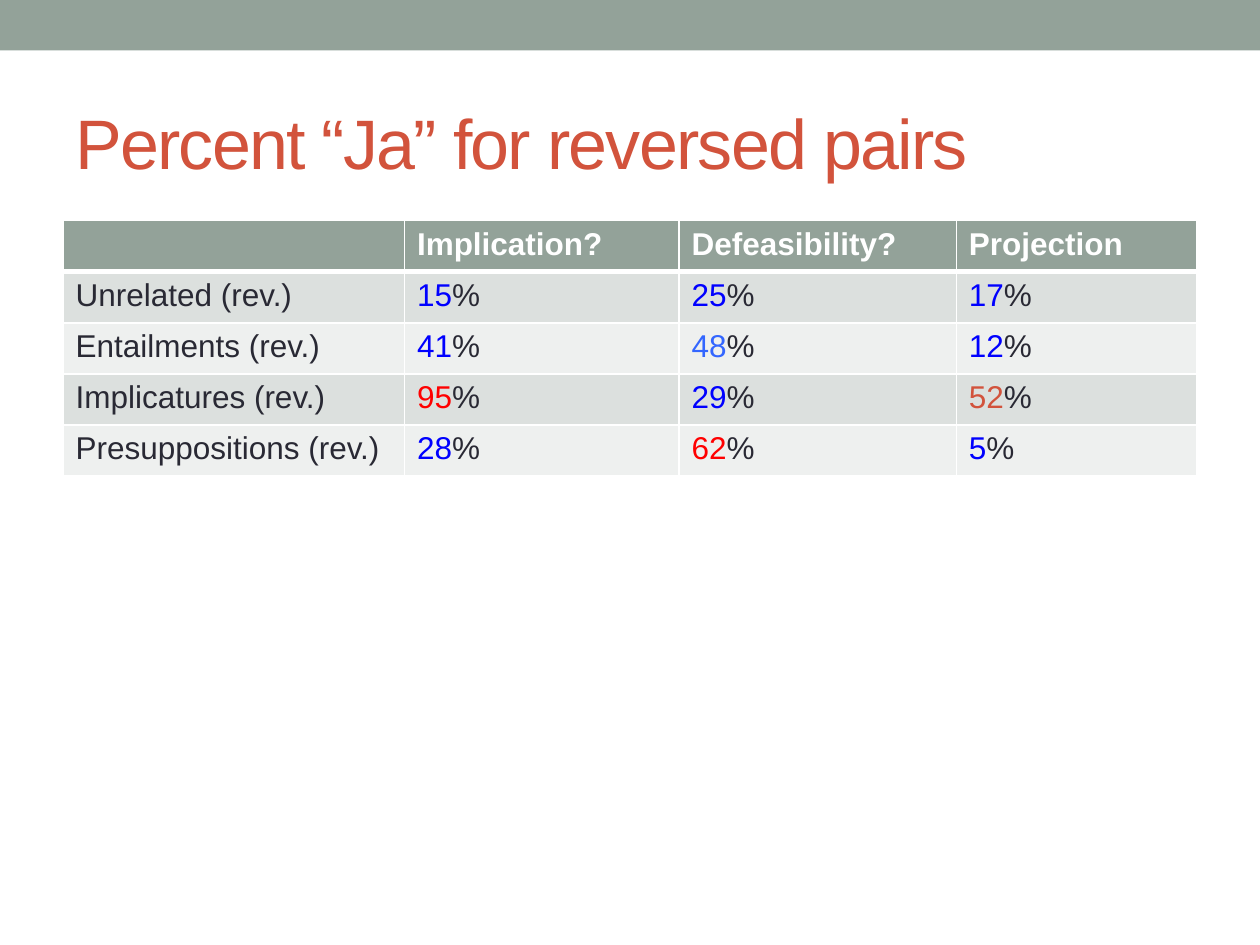
from lxml.etree import SubElement
from pptx import Presentation
from pptx.dml.color import RGBColor
from pptx.enum.shapes import MSO_SHAPE
from pptx.enum.text import MSO_ANCHOR
from pptx.oxml.ns import qn
from pptx.util import Inches, Pt

SAGE = RGBColor(0x93, 0xA2, 0x99)
BAND_DARK = RGBColor(0xDC, 0xE0, 0xDE)
BAND_LIGHT = RGBColor(0xEE, 0xF0, 0xEF)
WHITE = RGBColor(0xFF, 0xFF, 0xFF)
INK = RGBColor(0x29, 0x29, 0x34)
RUST = RGBColor(0xD2, 0x53, 0x3C)
BLUE = RGBColor(0x00, 0x00, 0xFF)
LIGHT_BLUE = RGBColor(0x33, 0x66, 0xFF)
RED = RGBColor(0xFF, 0x00, 0x00)

COL_WIDTHS = [2.71, 2.18, 2.2, 1.91]
HEADERS = ["", "Implication?", "Defeasibility?", "Projection"]
RESULTS = [
    ("Unrelated (rev.)", ("15", BLUE), ("25", BLUE), ("17", BLUE)),
    ("Entailments (rev.)", ("41", BLUE), ("48", LIGHT_BLUE), ("12", BLUE)),
    ("Implicatures (rev.)", ("95", RED), ("29", BLUE), ("52", RUST)),
    ("Presuppositions (rev.)", ("28", BLUE), ("62", RED), ("5", BLUE)),
]


class SlideBuilder:
    font = "Arial"

    def __init__(self, slide):
        self.s = slide

    def run(self, p, text, size, color, bold=False):
        r = p.add_run()
        r.text = text
        r.font.name = self.font
        r.font.size = Pt(size)
        r.font.bold = bold
        r.font.color.rgb = color
        return r

    def bar(self, x, y, w, h, color):
        sp = self.s.shapes.add_shape(
            MSO_SHAPE.RECTANGLE, Inches(x), Inches(y), Inches(w), Inches(h))
        sp.shadow.inherit = False
        sp.fill.solid()
        sp.fill.fore_color.rgb = color
        sp.line.fill.background()

    def title(self, text, x, y, w, h):
        sp = self.s.shapes.add_textbox(
            Inches(x), Inches(y), Inches(w), Inches(h))
        tf = sp.text_frame
        tf.word_wrap = True
        tf.vertical_anchor = MSO_ANCHOR.MIDDLE
        r = self.run(tf.paragraphs[0], text, 40, RUST)
        r._r.get_or_add_rPr().set("spc", "-100")

    def border(self, cell, side, width):
        ln = SubElement(cell._tc.get_or_add_tcPr(), qn(f"a:ln{side}"),
                        w=str(Pt(width)))
        fill = SubElement(ln, qn("a:solidFill"))
        SubElement(fill, qn("a:srgbClr"), val=str(WHITE))

    def cell(self, cell, runs, fill, top=1, bottom=1, bold=False):
        for side, width in zip("LRTB", (1, 1, top, bottom)):
            self.border(cell, side, width)
        cell.fill.solid()
        cell.fill.fore_color.rgb = fill
        p = cell.text_frame.paragraphs[0]
        for text, color in runs:
            self.run(p, text, 18, color, bold)

    def table(self, x, y, h, widths, headers, results):
        rows = len(results) + 1
        table = self.s.shapes.add_table(
            rows, len(widths), Inches(x), Inches(y),
            Inches(sum(widths)), Inches(h)).table
        for col, width in zip(table.columns, widths):
            col.width = Inches(width)
        for row in table.rows:
            row.height = Inches(h / rows)
        for j, text in enumerate(headers):
            runs = [(text, WHITE)] if text else []
            self.cell(table.cell(0, j), runs, SAGE, bottom=3, bold=True)
        for i, (label, *values) in enumerate(results, 1):
            fill = BAND_DARK if i % 2 else BAND_LIGHT
            contents = [[(label, INK)]] + [[v, ("%", INK)] for v in values]
            for j, runs in enumerate(contents):
                self.cell(table.cell(i, j), runs, fill, top=3 if i == 1 else 1)


def main():
    prs = Presentation()
    prs.slide_width = Inches(10)
    prs.slide_height = Inches(7.5)
    b = SlideBuilder(prs.slides.add_slide(prs.slide_layouts[6]))
    b.bar(0, 0, 10, 0.4, SAGE)
    b.title("Percent “Ja” for reversed pairs", 0.5, 0.58, 9, 1.08)
    b.table(0.5, 1.75, 2.03, COL_WIDTHS, HEADERS, RESULTS)
    prs.save("out.pptx")


if __name__ == "__main__":
    main()
